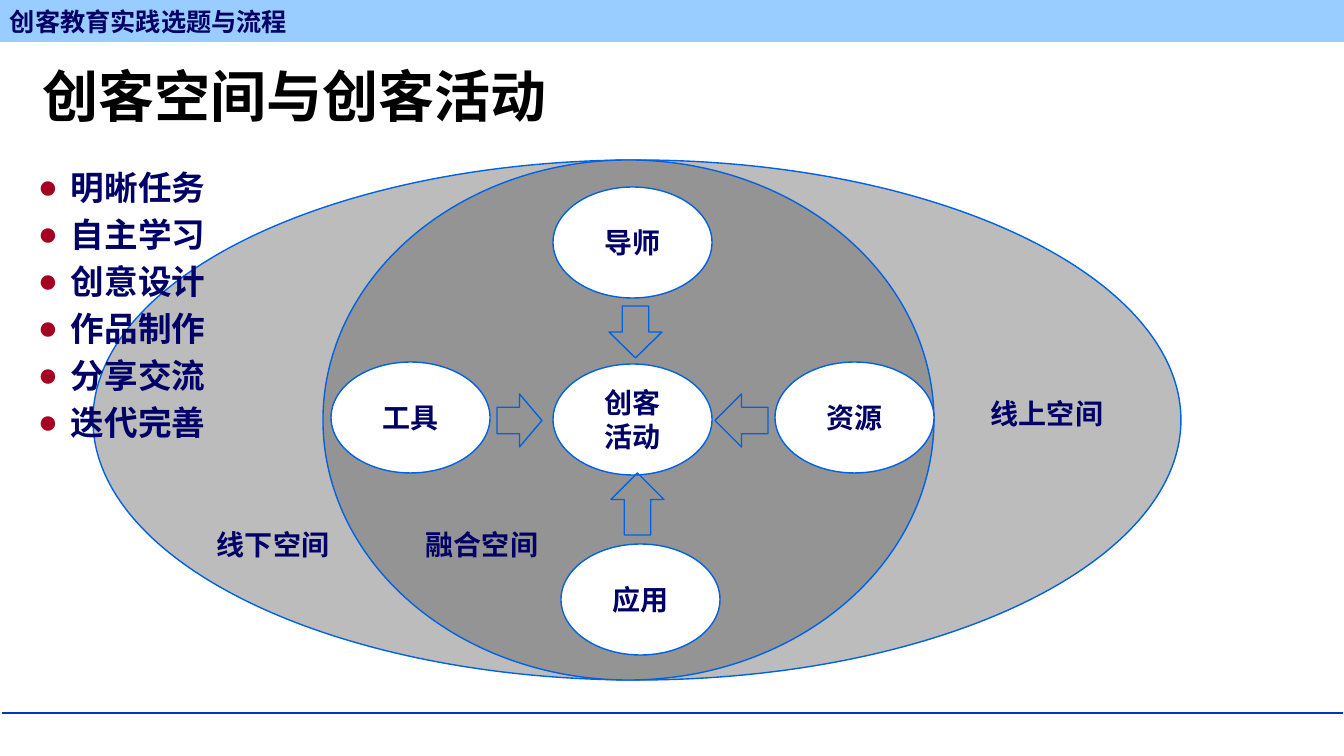
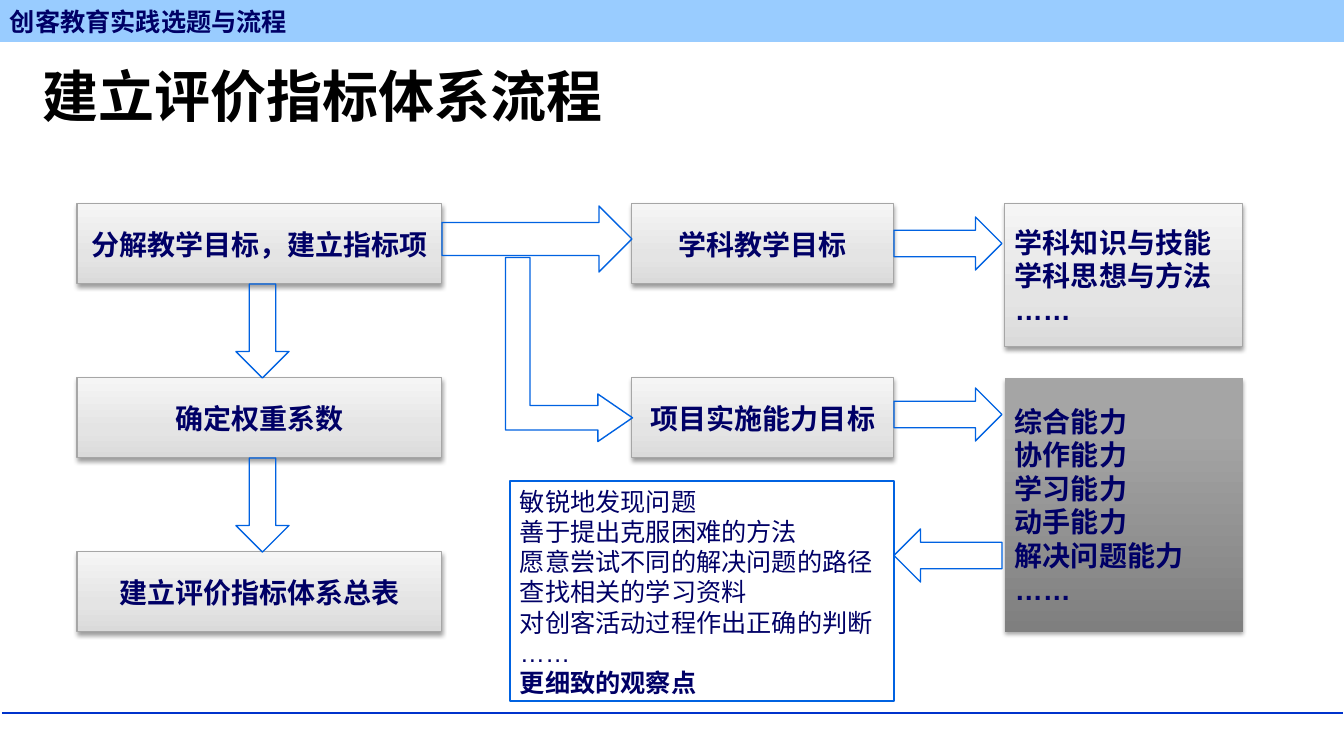
"""Build two slides on maker spaces and the evaluation index workflow."""
from lxml import etree
from pptx import Presentation
from pptx.dml.color import RGBColor
from pptx.enum.shapes import MSO_CONNECTOR, MSO_SHAPE
from pptx.enum.text import MSO_ANCHOR, PP_ALIGN
from pptx.oxml.ns import qn
from pptx.util import Pt

RECT, OVAL = MSO_SHAPE.RECTANGLE, MSO_SHAPE.OVAL
UP, DOWN = MSO_SHAPE.UP_ARROW, MSO_SHAPE.DOWN_ARROW
LEFT_ARROW, RIGHT_ARROW = MSO_SHAPE.LEFT_ARROW, MSO_SHAPE.RIGHT_ARROW
BENT = MSO_SHAPE.BENT_UP_ARROW
STRAIGHT = MSO_CONNECTOR.STRAIGHT
TOP, MIDDLE = MSO_ANCHOR.TOP, MSO_ANCHOR.MIDDLE
LEFT, CENTER = PP_ALIGN.LEFT, PP_ALIGN.CENTER

PX = 914400 / 100.8
SLIDE_W, SLIDE_H = 1344, 756
CJK = "Noto Sans CJK JP"
COLORS = {
    "band": "99CCFF", "rule": "0033CC", "text": "000066", "title": "000000",
    "outline": "0062E1", "outer": "BCBCBC", "inner": "949494",
    "white": "FFFFFF", "bullet": "A50021", "edge": "A6A6A6",
}
FONTS = {
    "header": {"size": Pt(18), "name": CJK, "bold": True},
    "title": {"size": Pt(40), "name": CJK, "bold": True},
    "label": {"size": Pt(20), "name": "Arial", "bold": True},
    "bullet": {"size": Pt(24), "name": "Arial", "bold": True},
    "note": {"size": Pt(18), "name": "Arial", "bold": False},
}
LIGHT = {"stops": [(0, "DADADA"), (35, "E4E4E4"), (100, "F5F5F5")],
         "edge": "edge", "alpha": 38, "dist": 20000}
DARK = {"stops": [(0, "7F7F7F"), (80, "A5A5A5"), (100, "A5A5A5")],
        "edge": None, "alpha": 35, "dist": 23000}

HEADER = "创客教育实践选题与流程"

SPACE_TITLE = "创客空间与创客活动"
STEPS = ["明晰任务", "自主学习", "创意设计", "作品制作", "分享交流", "迭代完善"]
SPACES = [((93, 160, 1088, 520), "outer"), ((323, 160, 611, 520), "inner")]
NODE_W, NODE_H = 159, 111
NODES = [
    (553, 364, ["创客", "活动"]), (553, 187, ["导师"]), (775, 362, ["资源"]),
    (331, 362, ["工具"]), (561, 544, ["应用"]),
]
SPACE_LABELS = [(974, 391, "线上空间"), (200, 522, "线下空间"), (409, 522, "融合空间")]
SPACE_ARROWS = [
    (DOWN, (609, 306, 53, 52)), (UP, (611, 473, 53, 62)),
    (RIGHT_ARROW, (497, 394, 45, 53)), (LEFT_ARROW, (715, 394, 53, 53)),
]

FLOW_TITLE = "建立评价指标体系流程"
COLUMNS = [(77, 365), (632, 262), (1005, 238)]
ROW_TOP, ROW_STEP, BOX_H = 204, 174, 80
FLOW_BOXES = [
    (0, 0, BOX_H, LIGHT, CENTER, ["分解教学目标，建立指标项"]),
    (0, 1, BOX_H, LIGHT, CENTER, ["确定权重系数"]),
    (0, 2, BOX_H, LIGHT, CENTER, ["建立评价指标体系总表"]),
    (1, 0, BOX_H, LIGHT, CENTER, ["学科教学目标"]),
    (1, 1, BOX_H, LIGHT, CENTER, ["项目实施能力目标"]),
    (2, 0, 143, LIGHT, LEFT, ["学科知识与技能", "学科思想与方法", "……"]),
    (2, 1, 254, DARK, LEFT,
     ["综合能力", "协作能力", "学习能力", "动手能力", "解决问题能力", "……"]),
]
OBSERVATIONS = [
    "敏锐地发现问题", "善于提出克服困难的方法", "愿意尝试不同的解决问题的路径",
    "查找相关的学习资料", "对创客活动过程作出正确的判断", "……", "更细致的观察点",
]
FLOW_ARROWS = [
    (RIGHT_ARROW, (442, 206, 190, 66)),
    (RIGHT_ARROW, (894, 217, 108, 53)), (RIGHT_ARROW, (894, 388, 108, 53)),
    (LEFT_ARROW, (894, 529, 108, 53)),
] + [(DOWN, (236, ROW_TOP + BOX_H + i * ROW_STEP, 53, ROW_STEP - BOX_H)) for i in range(2)]
BENT_ARROW = (477, 286, 184, 127)
BENT_ADJUST = [0.193, 0.187, 0.273]


def emu(*lengths):
    return [round(v * PX) for v in lengths]


def rgb(name):
    return RGBColor.from_string(COLORS[name])


def apply(target, values):
    for key, value in values.items():
        setattr(target, key, value)


def add_child(parent, tag, **attrs):
    return etree.SubElement(parent, qn(tag), attrs)


def add_bullet(p):
    pPr = p._p.get_or_add_pPr()
    apply_indent = {"marL": emu(33)[0], "indent": emu(-33)[0]}
    for key, value in apply_indent.items():
        pPr.set(key, str(value))
    add_child(add_child(pPr, "a:buClr"), "a:srgbClr", val=COLORS["bullet"])
    add_child(pPr, "a:buFont", typeface="Arial")
    add_child(pPr, "a:buChar", char="●")


def write(sp, lines, style, align=LEFT, anchor=MIDDLE, wrap=True,
          color="text", bullet=False):
    tf = sp.text_frame
    apply(tf, {"word_wrap": wrap, "vertical_anchor": anchor})
    font = FONTS[style]
    for i, line in enumerate(lines):
        p = tf.add_paragraph() if i else tf.paragraphs[0]
        p.alignment = align
        if len(lines) > 1:
            p.line_spacing = Pt(font["size"].pt * 1.2)
        if bullet:
            if i:
                p.space_before = Pt(font["size"].pt * 0.2)
            add_bullet(p)
        r = p.add_run()
        r.text = line
        apply(r.font, font)
        r.font.color.rgb = rgb(color)
        add_child(r._r.get_or_add_rPr(), "a:ea", typeface=CJK)
    return tf


def add_box(s, kind, at, fill=None, line="outline", width=1):
    sp = s.shapes.add_shape(kind, *emu(*at))
    sp.shadow.inherit = False
    if fill:
        sp.fill.solid()
        sp.fill.fore_color.rgb = rgb(fill)
    else:
        sp.fill.background()
    if line:
        sp.line.color.rgb = rgb(line)
        sp.line.width = Pt(width)
    else:
        sp.line.fill.background()
    return sp


def add_text(s, at, lines, style, **options):
    return write(s.shapes.add_textbox(*emu(*at)), lines, style, **options)


def add_panel(s, at, look):
    sp = add_box(s, RECT, at, line=look["edge"], width=0.75)
    sp.fill.gradient()
    sp.fill.gradient_angle = 90
    spPr = sp._element.spPr
    stops = spPr.find(qn("a:gradFill")).find(qn("a:gsLst"))
    for stop in list(stops):
        stops.remove(stop)
    for pos, color in look["stops"]:
        add_child(add_child(stops, "a:gs", pos=str(pos * 1000)), "a:srgbClr", val=color)
    shadow = add_child(spPr.find(qn("a:effectLst")), "a:outerShdw", blurRad="40000",
                       dist=str(look["dist"]), dir="5400000", rotWithShape="0")
    black = add_child(shadow, "a:srgbClr", val="000000")
    add_child(black, "a:alpha", val=str(look["alpha"] * 1000))
    return sp


def add_base(prs, title):
    s = prs.slides.add_slide(prs.slide_layouts[6])
    rule = s.shapes.add_connector(STRAIGHT, *emu(2, 713, 1343, 713))
    rule.line.color.rgb = rgb("rule")
    rule.line.width = Pt(2)
    add_child(rule._element.spPr, "a:effectLst")
    band = add_box(s, RECT, (0, 0, SLIDE_W, 42), "band", None)
    write(band, [HEADER], "header", wrap=False)
    tf = add_text(s, (33, 50, 1176, 84), [title], "title", color="title")
    tf.paragraphs[0].line_spacing = 1.1
    return s


def build_spaces(prs):
    s = add_base(prs, SPACE_TITLE)
    for at, fill in SPACES:
        add_box(s, OVAL, at, fill)
    for x, y, lines in NODES:
        node = add_box(s, OVAL, (x, y, NODE_W, NODE_H), "white")
        write(node, lines, "label", align=CENTER)
    for x, y, label in SPACE_LABELS:
        tf = add_text(s, (x, y, 142, 44), [label], "label", wrap=False)
        tf.margin_left = emu(17)[0]
    for kind, at in SPACE_ARROWS:
        add_box(s, kind, at)
    add_text(s, (28, 162, 1187, 545), STEPS, "bullet", anchor=TOP, bullet=True)


def build_flow(prs):
    s = add_base(prs, FLOW_TITLE)
    for col, row, height, look, align, lines in FLOW_BOXES:
        x, width = COLUMNS[col]
        panel = add_panel(s, (x, ROW_TOP + row * ROW_STEP, width, height), look)
        write(panel, lines, "label", align=align)
    for kind, at in FLOW_ARROWS:
        add_box(s, kind, at)
    bent = add_box(s, BENT, BENT_ARROW)
    bent.rotation = 90
    for i, value in enumerate(BENT_ADJUST):
        bent.adjustments[i] = value
    notes = add_box(s, RECT, (510, 481, 384, 220))
    tf = write(notes, OBSERVATIONS, "note", anchor=TOP)
    tf.paragraphs[-1].runs[0].font.bold = True


def main():
    prs = Presentation()
    prs.slide_width, prs.slide_height = emu(SLIDE_W, SLIDE_H)
    build_spaces(prs)
    build_flow(prs)
    prs.save("out.pptx")


if __name__ == "__main__":
    main()
